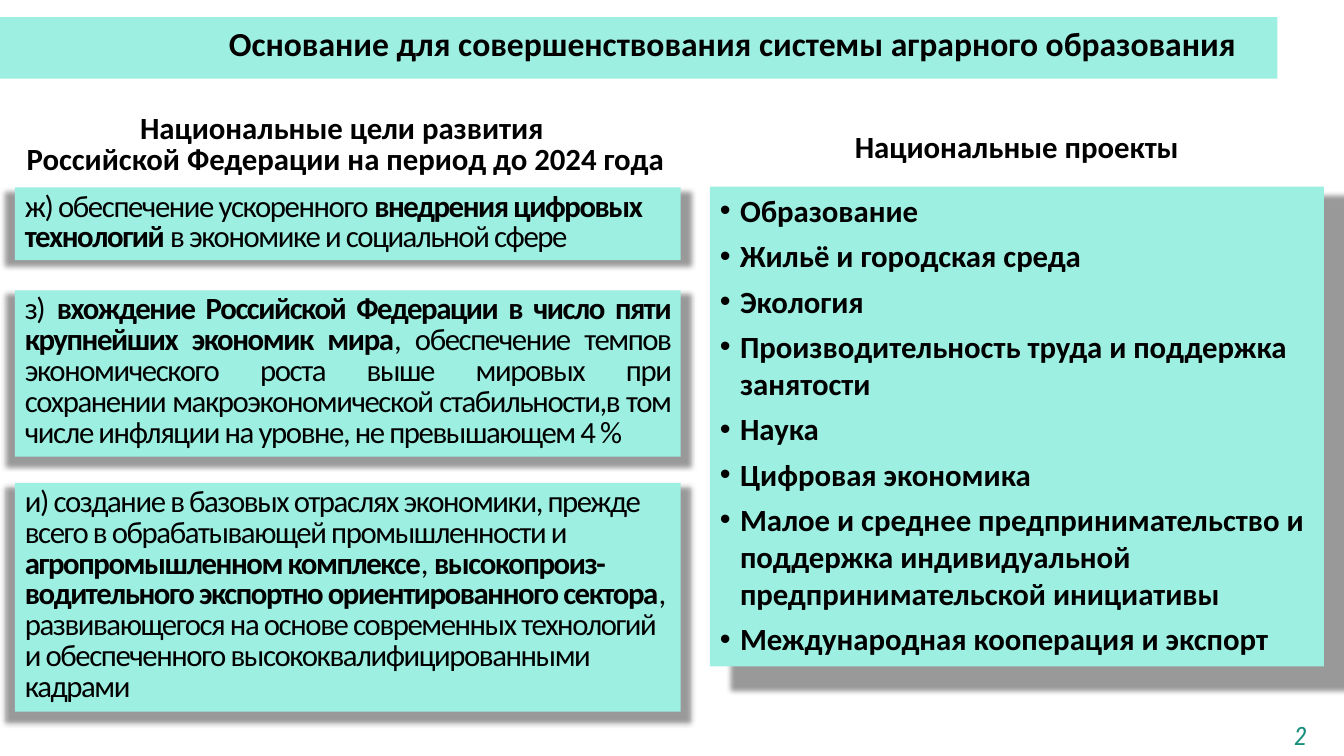
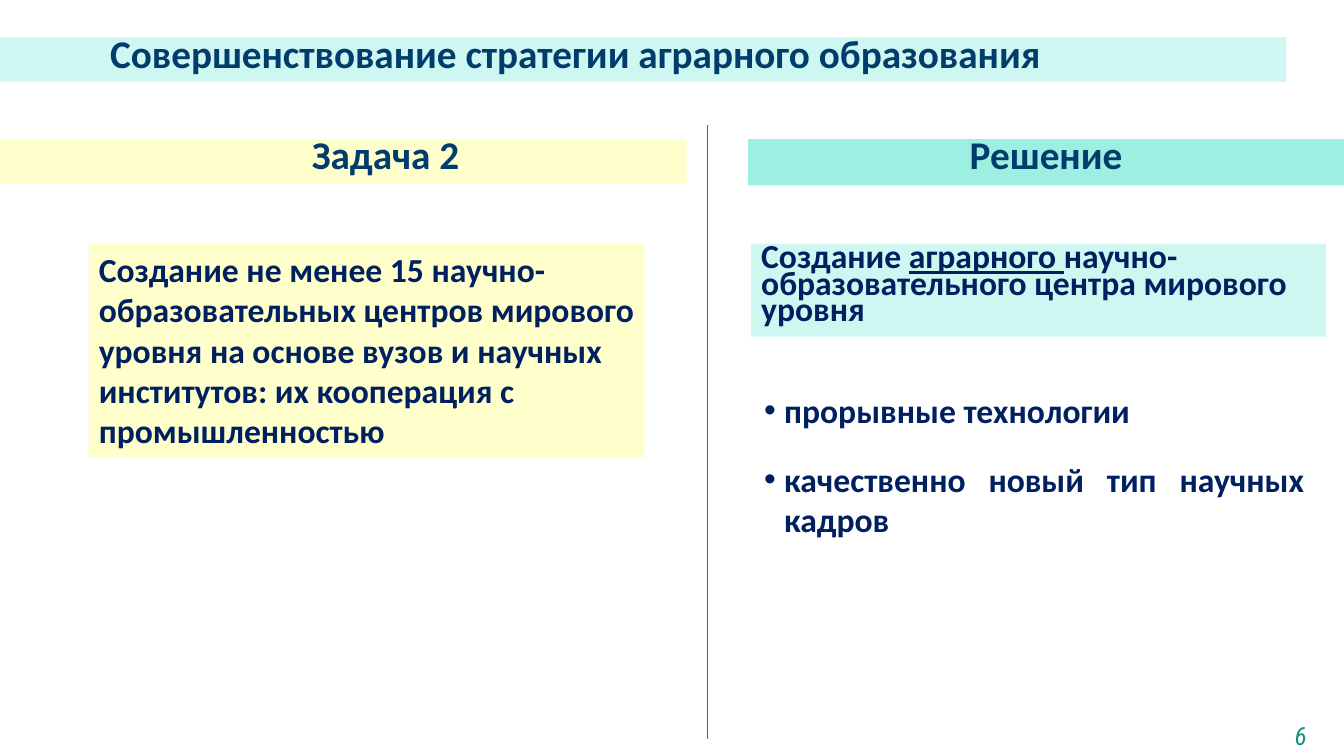
from dataclasses import dataclass, replace

from lxml import etree
from pptx import Presentation
from pptx.dml.color import RGBColor
from pptx.enum.shapes import MSO_CONNECTOR, MSO_SHAPE
from pptx.enum.text import MSO_ANCHOR, MSO_AUTO_SIZE, PP_ALIGN
from pptx.oxml.ns import qn
from pptx.util import Inches, Pt

RECTANGLE = MSO_SHAPE.RECTANGLE
STRAIGHT = MSO_CONNECTOR.STRAIGHT
LEFT, CENTER, JUSTIFY = PP_ALIGN.LEFT, PP_ALIGN.CENTER, PP_ALIGN.JUSTIFY
TOP, MIDDLE = MSO_ANCHOR.TOP, MSO_ANCHOR.MIDDLE
NO_RESIZE = MSO_AUTO_SIZE.NONE

COLORS = {
    "mint": "9CEFE1",
    "pale_mint": "CDF7F0",
    "cream": "FFFFCC",
    "black": "000000",
    "heading": "023C6D",
    "navy": "002060",
    "number": "178F7B",
    "divider": "0479DA",
}

SLIDE_WIDTH, SLIDE_HEIGHT = Inches(13.33), Inches(7.5)
COLUMN, ROW = SLIDE_WIDTH / 100, SLIDE_HEIGHT / 100
TITLE_AND_CONTENT = 1


@dataclass(frozen=True)
class Box:
    column: float
    row: float
    columns: float
    rows: float


@dataclass(frozen=True)
class Span:
    text: str
    bold: bool = False
    underline: bool = False


@dataclass(frozen=True)
class TextStyle:
    size: float
    color: str
    align: PP_ALIGN = LEFT
    line: float | None = None
    before: float = 0
    tracking: float = 0
    bulleted: bool = False
    italic: bool = False
    font: str = "Calibri"
    anchor: MSO_ANCHOR = TOP
    inset_left: float = 0.75
    inset_right: float = 0.75


@dataclass(frozen=True)
class Panel:
    box: Box
    paragraphs: list[list[Span]]
    style: TextStyle
    fill: str | None = None
    shadow: bool = False


def bold(text: str) -> list[Span]:
    return [Span(text, bold=True)]


def place(shape, box: Box) -> None:
    shape.left, shape.top = round(box.column * COLUMN), round(box.row * ROW)
    shape.width, shape.height = round(box.columns * COLUMN), round(box.rows * ROW)


def write(shape, paragraphs: list[list[Span]], style: TextStyle) -> None:
    frame = shape.text_frame
    frame.word_wrap = True
    frame.auto_size = NO_RESIZE
    frame.vertical_anchor = style.anchor
    frame.margin_left = round(style.inset_left * COLUMN)
    frame.margin_right = round(style.inset_right * COLUMN)
    frame.margin_top = frame.margin_bottom = Inches(0.05)
    for index, spans in enumerate(paragraphs):
        para = frame.add_paragraph() if index else frame.paragraphs[0]
        para.alignment = style.align
        para.space_before = Pt(style.before)
        if style.line:
            para.line_spacing = Pt(style.line)
        if style.bulleted:
            properties = para._p.get_or_add_pPr()
            properties.set("marL", str(Inches(0.2)))
            properties.set("indent", str(-Inches(0.2)))
        for span in spans:
            run = para.add_run()
            run.text = span.text
            run.font.name = style.font
            run.font.size = Pt(style.size)
            run.font.bold = span.bold
            run.font.italic = style.italic
            run.font.underline = span.underline
            run.font.color.rgb = RGBColor.from_string(COLORS[style.color])
            if style.tracking:
                run._r.get_or_add_rPr().set("spc", str(round(style.tracking * 100)))


def add_shadow(shape) -> None:
    effects = shape._element.spPr.find(qn("a:effectLst"))
    shadow = etree.SubElement(
        effects, qn("a:outerShdw"), blurRad=str(Pt(4)), dist=str(Pt(3)),
        dir="5400000", sx="103000", sy="103000", algn="t", rotWithShape="0")
    color = etree.SubElement(shadow, qn("a:srgbClr"), val=COLORS["black"])
    etree.SubElement(color, qn("a:alpha"), val="40000")


def dress(shape, panel: Panel) -> None:
    place(shape, panel.box)
    if panel.fill:
        shape.fill.solid()
        shape.fill.fore_color.rgb = RGBColor.from_string(COLORS[panel.fill])
    else:
        shape.fill.background()
    shape.line.fill.background()
    shape.shadow.inherit = False
    if panel.shadow:
        add_shadow(shape)
    write(shape, panel.paragraphs, panel.style)


def add_divider(page, column: float, top: float, bottom: float) -> None:
    x = round(column * COLUMN)
    divider = page.shapes.add_connector(
        STRAIGHT, x, round(top * ROW), x, round(bottom * ROW))
    divider.line.color.rgb = RGBColor.from_string(COLORS["divider"])
    divider.line.width = Pt(0.5)
    etree.SubElement(divider._element.spPr, qn("a:effectLst"))


def build_page(deck, title: Panel, bullets: Panel, panels: list[Panel], number: str):
    page = deck.slides.add_slide(deck.slide_layouts[TITLE_AND_CONTENT])
    dress(page.shapes.title, title)
    dress(page.placeholders[1], bullets)
    for panel in panels:
        dress(page.shapes.add_shape(RECTANGLE, 0, 0, 0, 0), panel)
    number_box = page.shapes.add_textbox(0, 0, 0, 0)
    place(number_box, Box(93.55, 94.67, 6.45, 5.33))
    write(number_box, [[Span(number)]], NUMBER_STYLE)
    return page


NUMBER_STYLE = TextStyle(18, "number", CENTER, italic=True, font="Roboto Condensed")
GOAL_STYLE = TextStyle(22, "black", line=22, tracking=-1)
CAPTION_STYLE = TextStyle(22, "black", CENTER, line=22)
PROJECT_STYLE = TextStyle(22, "black", before=6, bulleted=True)
HEADING_STYLE = TextStyle(28, "heading", line=24)
BODY_STYLE = TextStyle(24, "navy")

GOALS_LEFT, GOALS_WIDTH = 1.1, 49.55
PROJECTS_LEFT, PROJECTS_WIDTH = 52.81, 45.69


def build_basis(deck) -> None:
    title = Panel(
        Box(0, 2.27, 95.05, 8.13),
        [bold("Основание для совершенствования системы аграрного образования")],
        TextStyle(24, "black", CENTER, line=22, anchor=MIDDLE,
                  inset_left=15.68, inset_right=1.73),
        "mint")
    projects = Panel(
        Box(PROJECTS_LEFT, 24.67, PROJECTS_WIDTH, 63.47),
        [bold(name) for name in (
            "Образование",
            "Жильё и городская среда",
            "Экология",
            "Производительность труда и поддержка занятости",
            "Наука",
            "Цифровая экономика",
            "Малое и среднее предпринимательство и поддержка индивидуальной "
            "предпринимательской инициативы",
            "Международная кооперация и экспорт",
        )],
        PROJECT_STYLE, "mint", shadow=True)
    captions = [
        Panel(Box(GOALS_LEFT, 14.53, 49.2, 9.6),
              [bold("Национальные цели развития "),
               bold("Российской Федерации на период до 2024 года")],
              CAPTION_STYLE),
        Panel(Box(PROJECTS_LEFT, 17.07, PROJECTS_WIDTH, 5.47),
              [bold("Национальные проекты")], CAPTION_STYLE),
    ]
    goals = [
        (24.8, 9.6, LEFT, [
            Span("ж) обеспечение ускоренного "),
            Span("внедрения цифровых технологий", bold=True),
            Span(" в экономике и социальной сфере")]),
        (38.4, 22, JUSTIFY, [
            Span("з) "),
            Span("вхождение Российской Федерации в число пяти крупнейших "
                 "экономик мира", bold=True),
            Span(", обеспечение темпов экономического роста выше мировых при "
                 "сохранении макроэкономической стабильности,в том числе "
                 "инфляции на уровне, не превышающем 4 %")]),
        (63.87, 30.27, LEFT, [
            Span("и) создание в базовых отраслях экономики, прежде всего "
                 "в обрабатывающей промышленности и "),
            Span("агропромышленном комплексе", bold=True),
            Span(", "),
            Span("высокопроиз-водительного экспортно ориентированного сектора",
                 bold=True),
            Span(", развивающегося на основе современных технологий "
                 "и обеспеченного высококвалифицированными кадрами")]),
    ]
    goal_panels = [
        Panel(Box(GOALS_LEFT, row, GOALS_WIDTH, rows), [spans],
              replace(GOAL_STYLE, align=align), "mint", shadow=True)
        for row, rows, align, spans in goals
    ]
    build_page(deck, title, projects, captions + goal_panels, "2")


def build_strategy(deck) -> None:
    title = Panel(
        Box(0, 4.93, 95.72, 5.87),
        [bold("Совершенствование стратегии аграрного образования")],
        replace(HEADING_STYLE, inset_left=8.2), "pale_mint")
    results = Panel(
        Box(56.1, 50.93, 41.7, 21.33),
        [bold("прорывные технологии"),
         bold("качественно новый тип научных кадров")],
        replace(BODY_STYLE, align=JUSTIFY, before=20, bulleted=True))
    panels = [
        Panel(Box(0, 18.4, 51.09, 5.87), [bold("Задача 2")],
              replace(HEADING_STYLE, inset_left=23.2), "cream"),
        Panel(Box(55.66, 18.4, 44.34, 6.13), [bold("Решение")],
              replace(HEADING_STYLE, align=CENTER), "mint"),
        Panel(Box(6.6, 32.27, 41.34, 28.27),
              [bold("Создание не менее 15 научно-образовательных центров "
                    "мирового уровня на основе вузов и научных институтов: "
                    "их кооперация с промышленностью")],
              BODY_STYLE, "cream"),
        Panel(Box(55.89, 32.27, 42.76, 12.27),
              [[Span("Создание ", bold=True),
                Span("аграрного ", bold=True, underline=True),
                Span("научно-образовательного центра мирового уровня", bold=True)]],
              replace(BODY_STYLE, line=19), "pale_mint"),
    ]
    page = build_page(deck, title, results, panels, "6")
    add_divider(page, 52.66, 16.53, 97.73)


def main() -> None:
    deck = Presentation()
    deck.slide_width, deck.slide_height = SLIDE_WIDTH, SLIDE_HEIGHT
    build_basis(deck)
    build_strategy(deck)
    deck.save("out.pptx")


if __name__ == "__main__":
    main()
